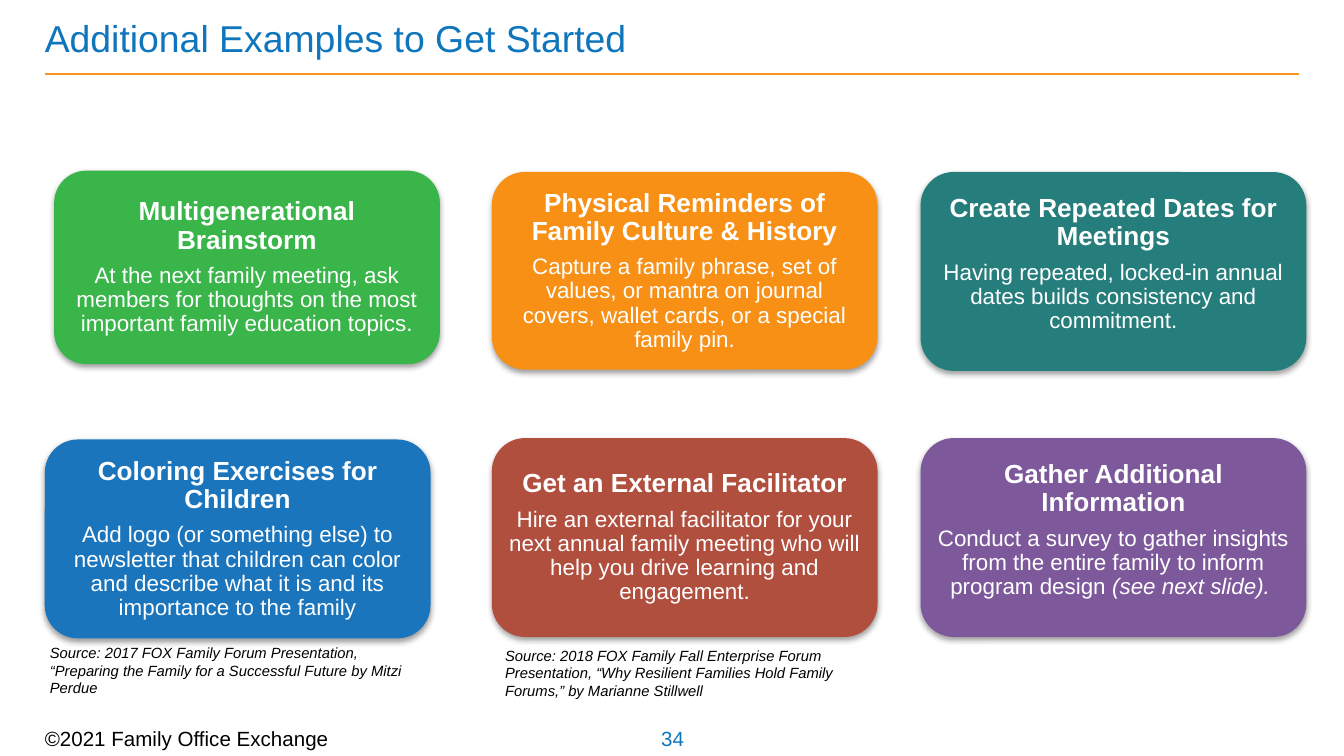
from dataclasses import dataclass

from lxml.etree import SubElement
from pptx import Presentation
from pptx.dml.color import RGBColor
from pptx.enum.shapes import MSO_CONNECTOR, MSO_SHAPE
from pptx.enum.text import MSO_ANCHOR as ANCHOR, PP_ALIGN as ALIGN
from pptx.oxml.ns import qn
from pptx.slide import Slide
from pptx.text.text import TextFrame
from pptx.util import Inches, Pt

WIDTH = 10
HEIGHT = WIDTH * 9 / 16
MARGIN = WIDTH / 30
COLUMNS = (MARGIN, 3.66, 6.85)
ROWS = (1.28, 3.26)
CARD_W, CARD_H = 2.87, 1.48
CARD_INSET = 0.05

FONT = "Arial"
WHITE = RGBColor(0xFF, 0xFF, 0xFF)
BLACK = RGBColor(0x00, 0x00, 0x00)
TITLE_BLUE = RGBColor(0x0F, 0x75, 0xBC)
RULE_ORANGE = RGBColor(0xF7, 0x94, 0x1D)
GREEN = RGBColor(0x39, 0xB5, 0x4A)
ORANGE = RGBColor(0xF7, 0x90, 0x15)
TEAL = RGBColor(0x26, 0x7E, 0x7C)
BLUE = RGBColor(0x1B, 0x75, 0xBC)
RED = RGBColor(0xB1, 0x4F, 0x3F)
PURPLE = RGBColor(0x7D, 0x59, 0x9B)


@dataclass(frozen=True)
class Card:
    col: int
    row: int
    fill: RGBColor
    heading: str
    body: str
    aside: str = ""
    dx: float = 0
    dy: float = 0
    height: float = CARD_H
    lift: float = 0  # extra bottom inset that raises the text


@dataclass(frozen=True)
class Source:
    col: int
    top: float
    left_shift: float
    text: str


CARDS = (
    Card(0, 0, GREEN, "Multigenerational Brainstorm",
         "At the next family meeting, ask members for thoughts on the most "
         "important family education topics.", dx=0.07, dy=-0.01, height=1.44),
    Card(1, 0, ORANGE, "Physical Reminders of Family Culture & History",
         "Capture a family phrase, set of values, or mantra on journal covers, "
         "wallet cards, or a special family pin.", height=1.47),
    Card(2, 0, TEAL, "Create Repeated Dates for Meetings",
         "Having repeated, locked-in annual dates builds consistency and "
         "commitment.", lift=0.11),
    Card(0, 1, BLUE, "Coloring Exercises for Children",
         "Add logo (or something else) to newsletter that children can color "
         "and describe what it is and its importance to the family", dy=0.01),
    Card(1, 1, RED, "Get an External Facilitator",
         "Hire an external facilitator for your next annual family meeting who "
         "will help you drive learning and engagement."),
    Card(2, 1, PURPLE, "Gather Additional Information",
         "Conduct a survey to gather insights from the entire family to inform "
         "program design ", aside="(see next slide). ", lift=0.11),
)

SOURCES = (
    Source(0, 4.74, -0.06, "Source: 2017 FOX Family Forum Presentation, “Preparing "
           "the Family for a Successful Future by Mitzi Perdue"),
    Source(1, 4.76, 0, "Source: 2018 FOX Family Fall Enterprise Forum Presentation, "
           "“Why Resilient Families Hold Family Forums,” by Marianne Stillwell"),
)


def add_run(p, text: str, *, size: float, color: RGBColor,
            bold: bool = False, italic: bool = False) -> None:
    r = p.add_run()
    r.text = text
    r.font.name, r.font.size = FONT, Pt(size)
    r.font.bold, r.font.italic = bold, italic
    r.font.color.rgb = color


def set_insets(tf: TextFrame, left: float, top: float, right: float, bottom: float) -> None:
    tf.margin_left, tf.margin_top = Inches(left), Inches(top)
    tf.margin_right, tf.margin_bottom = Inches(right), Inches(bottom)


def add_text(s: Slide, text: str, left: float, top: float, width: float, height: float, *,
             insets=(0, 0, 0, 0), anchor=ANCHOR.MIDDLE, align=ALIGN.LEFT,
             wrap: bool = False, **font) -> None:
    tf = s.shapes.add_textbox(Inches(left), Inches(top), Inches(width), Inches(height)).text_frame
    tf.word_wrap, tf.vertical_anchor = wrap, anchor
    set_insets(tf, *insets)
    p = tf.paragraphs[0]
    p.alignment = align
    add_run(p, text, **font)


def add_soft_shadow(sp) -> None:
    """Give the shape a faint shadow straight below it."""
    sp.shadow.inherit = False
    effects = sp._element.spPr.find(qn("a:effectLst"))
    shadow = SubElement(effects, qn("a:outerShdw"), blurRad=str(Pt(3.1)), dist=str(Pt(1.6)),
                        dir="5400000", rotWithShape="0")
    color = SubElement(shadow, qn("a:srgbClr"), val="000000")
    SubElement(color, qn("a:alpha"), val="38000")


def add_card(s: Slide, card: Card) -> None:
    sp = s.shapes.add_shape(MSO_SHAPE.ROUNDED_RECTANGLE,
                            Inches(COLUMNS[card.col] + card.dx),
                            Inches(ROWS[card.row] + card.dy),
                            Inches(CARD_W), Inches(card.height))
    sp.fill.solid()
    sp.fill.fore_color.rgb = card.fill
    sp.line.fill.background()
    add_soft_shadow(sp)

    tf = sp.text_frame
    tf.word_wrap, tf.vertical_anchor = True, ANCHOR.MIDDLE
    set_insets(tf, CARD_INSET, CARD_INSET, CARD_INSET, CARD_INSET + card.lift)
    heading, body = tf.paragraphs[0], tf.add_paragraph()
    for p in (heading, body):
        p.alignment, p.line_spacing = ALIGN.CENTER, 0.9
    heading.space_after = Pt(5)
    add_run(heading, card.heading, size=14, color=WHITE, bold=True)
    add_run(body, card.body, size=12, color=WHITE)
    if card.aside:
        add_run(body, card.aside, size=12, color=WHITE, italic=True)


def add_rule(s: Slide, y: float) -> None:
    line = s.shapes.add_connector(MSO_CONNECTOR.STRAIGHT, Inches(MARGIN), Inches(y),
                                  Inches(WIDTH - MARGIN), Inches(y))
    line.line.color.rgb, line.line.width = RULE_ORANGE, Pt(1)
    SubElement(line._element.spPr, qn("a:effectLst"))


def main() -> None:
    prs = Presentation()
    prs.slide_width, prs.slide_height = Inches(WIDTH), Inches(HEIGHT)
    s = prs.slides.add_slide(prs.slide_layouts[6])

    add_rule(s, 0.55)
    add_text(s, "34", 4.91, 5.4, 0.19, 0.19, align=ALIGN.CENTER, size=11, color=TITLE_BLUE)
    add_text(s, "©2021 Family Office Exchange", MARGIN, 5.43, 2.5, 0.13, size=11, color=BLACK)
    add_text(s, "Additional Examples to Get Started", MARGIN, 0.04, 8.1, 0.48,
             insets=(0, 0.05, 0.1, 0.05), wrap=True, size=20, color=TITLE_BLUE)
    for card in CARDS:
        add_card(s, card)
    for src in SOURCES:
        add_text(s, src.text, COLUMNS[src.col] + src.left_shift, src.top,
                 CARD_W - src.left_shift, 0.5, insets=(0.1, 0.05, 0.1, 0.05),
                 anchor=ANCHOR.TOP, wrap=True, size=7.9, color=BLACK, italic=True)

    prs.save("out.pptx")


if __name__ == "__main__":
    main()
